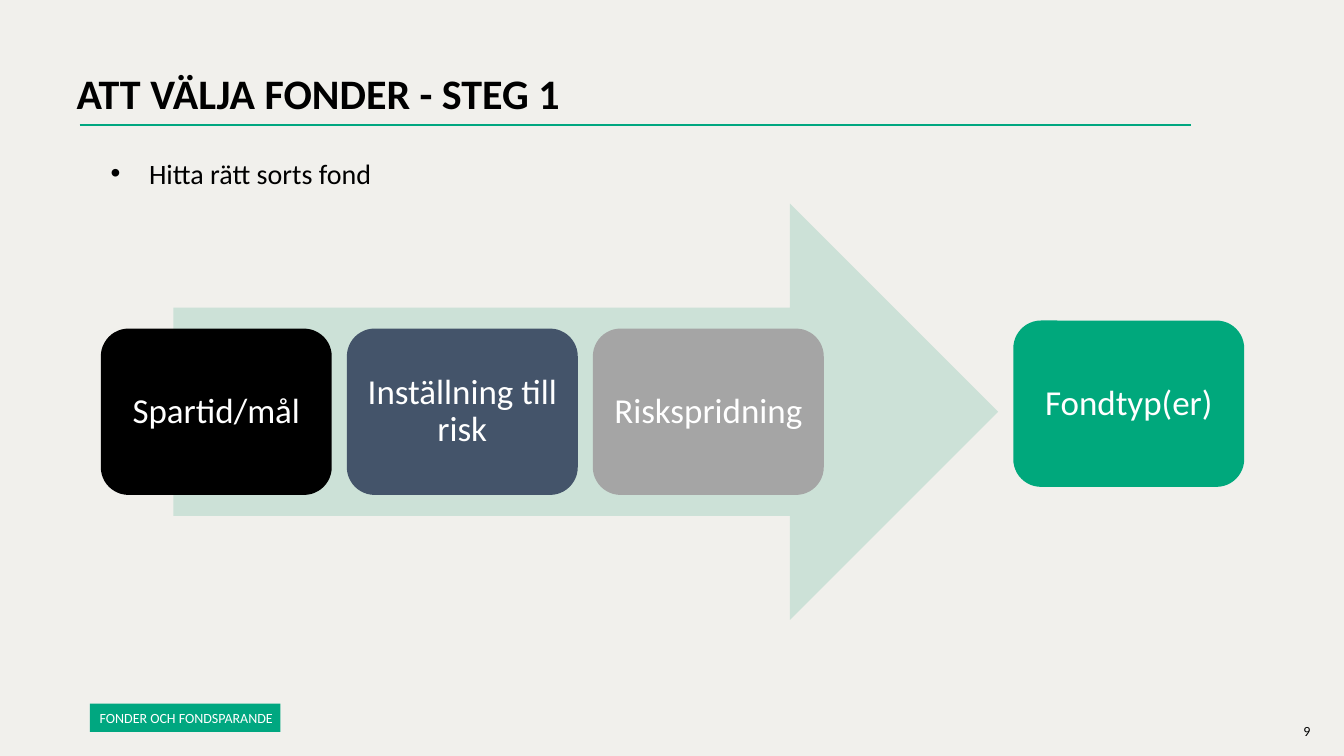
from lxml.etree import SubElement
from pptx import Presentation
from pptx.dml.color import RGBColor
from pptx.enum.shapes import MSO_CONNECTOR, MSO_SHAPE
from pptx.enum.text import MSO_ANCHOR, MSO_AUTO_SIZE, PP_ALIGN
from pptx.oxml.ns import qn
from pptx.util import Inches, Pt

BACKGROUND = RGBColor(0xF1, 0xF0, 0xEC)
BLACK = RGBColor(0x00, 0x00, 0x00)
WHITE = RGBColor(0xFF, 0xFF, 0xFF)
GREEN = RGBColor(0x00, 0xA7, 0x80)
RESULT_GREEN = RGBColor(0x00, 0xA8, 0x7C)
PALE_GREEN = RGBColor(0xCC, 0xE1, 0xD7)
SLATE = RGBColor(0x44, 0x54, 0x6A)
GREY = RGBColor(0xA5, 0xA5, 0xA5)
FONT = "Calibri"


def write_text(frame, text, size=20, color=BLACK, bold=False, align=PP_ALIGN.LEFT,
               anchor=MSO_ANCHOR.TOP, spacing=1.0, wrap=True,
               insets=(0.1, 0.05, 0.1, 0.05), bullet=None):
    """Fill a text frame; insets run left, top, right, bottom in inches."""
    frame.text = text
    frame.auto_size = MSO_AUTO_SIZE.NONE
    frame.word_wrap = wrap
    frame.vertical_anchor = anchor
    (frame.margin_left, frame.margin_top,
     frame.margin_right, frame.margin_bottom) = map(Inches, insets)
    paragraph = frame.paragraphs[0]
    paragraph.alignment = align
    paragraph.line_spacing = spacing
    paragraph.space_before = Pt(0)
    if bullet:
        properties = paragraph._p.get_or_add_pPr()
        properties.set("marL", str(Inches(0.38)))
        properties.set("indent", str(Inches(-0.38)))
        SubElement(properties, qn("a:buFont"), typeface="Arial")
        SubElement(properties, qn("a:buChar"), char=bullet)
    font = paragraph.runs[0].font
    font.name, font.size, font.bold = FONT, Pt(size), bold
    font.color.rgb = color


class FundSlide:
    def __init__(self, presentation):
        self.slide = presentation.slides.add_slide(presentation.slide_layouts[5])
        self.shapes = self.slide.shapes
        fill = self.slide.background.fill
        fill.solid()
        fill.fore_color.rgb = BACKGROUND

    def title(self, text, left, top, width, height):
        heading = self.shapes.title
        heading.left, heading.top = Inches(left), Inches(top)
        heading.width, heading.height = Inches(width), Inches(height)
        write_text(heading.text_frame, text, size=30, bold=True, spacing=0.9)

    def rule(self, left, right, y):
        line = self.shapes.add_connector(MSO_CONNECTOR.STRAIGHT, Inches(left), Inches(y),
                                         Inches(right), Inches(y))
        line.line.color.rgb = GREEN
        line.line.width = Pt(1.5)
        SubElement(line._element.spPr, qn("a:effectLst"))

    def label(self, text, left, top, width, height, **text_format):
        box = self.shapes.add_textbox(Inches(left), Inches(top), Inches(width), Inches(height))
        write_text(box.text_frame, text, **text_format)

    def block(self, kind, left, top, width, height, color, text=None, **text_format):
        shape = self.shapes.add_shape(kind, Inches(left), Inches(top),
                                      Inches(width), Inches(height))
        shape.shadow.inherit = False
        shape.fill.solid()
        shape.fill.fore_color.rgb = color
        shape.line.fill.background()
        if text:
            write_text(shape.text_frame, text, color=WHITE, anchor=MSO_ANCHOR.MIDDLE,
                       spacing=0.9, **text_format)

    def card(self, text, left, top, color):
        self.block(MSO_SHAPE.ROUNDED_RECTANGLE, left, top, 2.29, 1.65, color, text,
                   size=25, align=PP_ALIGN.CENTER, insets=(0.1, 0.1, 0.1, 0.1))


def main():
    presentation = Presentation()
    presentation.slide_width = Inches(13.33)
    presentation.slide_height = Inches(7.5)
    page = FundSlide(presentation)

    # Heading
    page.rule(0.79, 11.81, 1.24)
    page.title("ATT VÄLJA FONDER - STEG 1", 0.66, 0.68, 12.21, 1.45)
    page.label("Hitta rätt sorts fond", 1, 1.5, 6.67, 0.44, bullet="•")

    # Arrow with the three considerations, leading to the fund type
    page.block(MSO_SHAPE.RIGHT_ARROW, 1.72, 2.02, 8.18, 4.13, PALE_GREEN)
    considerations = [("Spartid/mål", BLACK), ("Inställning till risk", SLATE),
                      ("Riskspridning", GREY)]
    for index, (consideration, color) in enumerate(considerations):
        page.card(consideration, 1 + 2.44 * index, 3.26, color)
    page.card("Fondtyp(er)", 10.05, 3.18, RESULT_GREEN)

    # Footer
    page.block(MSO_SHAPE.RECTANGLE, 0.89, 6.98, 1.89, 0.28, GREEN, "FONDER OCH FONDSPARANDE",
               size=10, wrap=False, insets=(0.1, 0.08, 0.04, 0.05))
    page.label("9", 12.83, 7.12, 0.4, 0.27, size=10)

    presentation.save("out.pptx")


if __name__ == "__main__":
    main()
